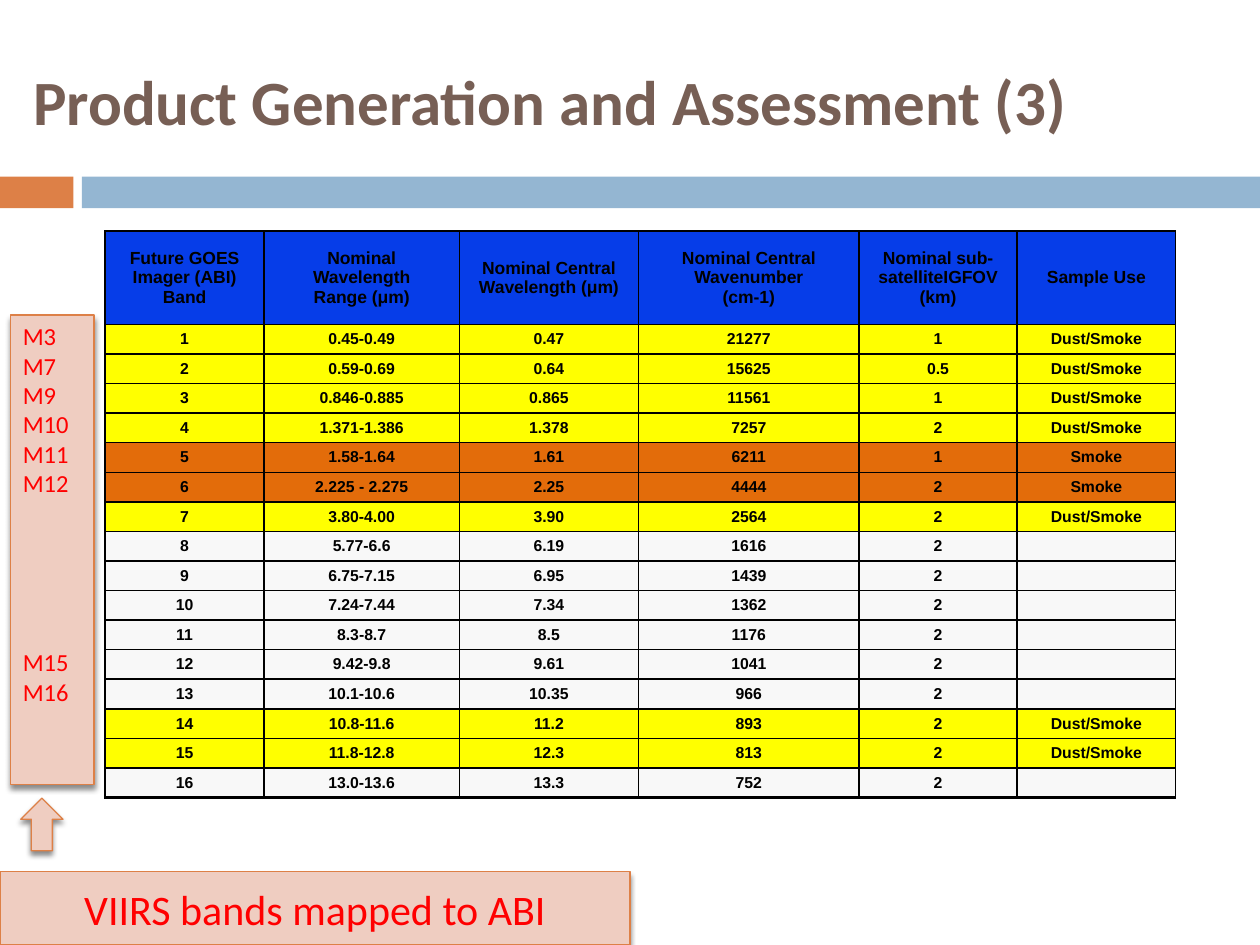
"""Build the slide that maps VIIRS bands to the future ABI bands."""
import pptx
import pptx.util
import pptx.dml.color
import pptx.enum.shapes
import pptx.enum.text
import pptx.oxml
import pptx.oxml.ns

Cm = pptx.util.Cm
Pt = pptx.util.Pt
RGBColor = pptx.dml.color.RGBColor
SHAPE = pptx.enum.shapes.MSO_SHAPE
ALIGN = pptx.enum.text.PP_ALIGN
ANCHOR = pptx.enum.text.MSO_ANCHOR

BLACK = RGBColor(0x00, 0x00, 0x00)
RED = RGBColor(0xFF, 0x00, 0x00)
BROWN = RGBColor(0x77, 0x5F, 0x55)
ORANGE = RGBColor(0xDD, 0x80, 0x47)
LIGHT_BLUE = RGBColor(0x94, 0xB6, 0xD2)
PEACH = RGBColor(0xEF, 0xCD, 0xC1)
HEADER_BLUE = RGBColor(0x06, 0x3D, 0xE8)
USE_COLORS = {
    "Dust/Smoke": RGBColor(0xFF, 0xFF, 0x00),
    "Smoke": RGBColor(0xE3, 0x6C, 0x0A),
    "": RGBColor(0xF8, 0xF8, 0xF8),
}

TITLE = "Product Generation and Assessment (3)"
CAPTION = "VIIRS bands mapped to ABI"
VIIRS_BANDS = ["M3", "M7", "M9", "M10", "M11", "M12", "M15", "M16"]
BAND_AFTER_GAP = "M15"
BAND_GAP = Pt(85.4)

HEADERS = (
    "Future GOES\nImager (ABI)\nBand",
    "Nominal\nWavelength\nRange (μm)",
    "Nominal Central\nWavelength (μm)",
    "Nominal Central Wavenumber\n(cm-1)",
    "Nominal sub-satelliteIGFOV\n(km)",
    "Sample Use",
)
BANDS = [
    ("1", "0.45-0.49", "0.47", "21277", "1", "Dust/Smoke"),
    ("2", "0.59-0.69", "0.64", "15625", "0.5", "Dust/Smoke"),
    ("3", "0.846-0.885", "0.865", "11561", "1", "Dust/Smoke"),
    ("4", "1.371-1.386", "1.378", "7257", "2", "Dust/Smoke"),
    ("5", "1.58-1.64", "1.61", "6211", "1", "Smoke"),
    ("6", "2.225 - 2.275", "2.25", "4444", "2", "Smoke"),
    ("7", "3.80-4.00", "3.90", "2564", "2", "Dust/Smoke"),
    ("8", "5.77-6.6", "6.19", "1616", "2", ""),
    ("9", "6.75-7.15", "6.95", "1439", "2", ""),
    ("10", "7.24-7.44", "7.34", "1362", "2", ""),
    ("11", "8.3-8.7", "8.5", "1176", "2", ""),
    ("12", "9.42-9.8", "9.61", "1041", "2", ""),
    ("13", "10.1-10.6", "10.35", "966", "2", ""),
    ("14", "10.8-11.6", "11.2", "893", "2", "Dust/Smoke"),
    ("15", "11.8-12.8", "12.3", "813", "2", "Dust/Smoke"),
    ("16", "13.0-13.6", "13.3", "752", "2", ""),
]
COLUMN_WIDTHS = (3.2, 3.94, 3.61, 4.45, 3.18, 3.2)
TABLE_LEFT, TABLE_TOP, TABLE_HEIGHT = 2.12, 4.66, 11.43
HEADER_HEIGHT = 1.88

BORDER = (
    '<a:{side} xmlns:a="http://schemas.openxmlformats.org/drawingml/2006/main" w="{width}">'
    '<a:solidFill><a:srgbClr val="{color}"/></a:solidFill></a:{side}>'
)
SHADOW = (
    '<a:outerShdw blurRad="{blur}" dist="{distance}" dir="5400000" rotWithShape="0">'
    '<a:srgbClr val="{color}"><a:alpha val="45000"/></a:srgbClr></a:outerShdw>'
)


def style(paragraph, size, color, name="Calibri", bold=False, align=ALIGN.LEFT):
    paragraph.alignment = align
    font = paragraph.font
    font.size, font.name, font.bold = Pt(size), name, bold
    font.color.rgb = color


def add_block(slide, kind, box, fill):
    shape = slide.shapes.add_shape(kind, *map(Cm, box))
    shape.shadow.inherit = False
    shape.fill.solid()
    shape.fill.fore_color.rgb = fill
    shape.line.fill.background()
    return shape


def add_callout(slide, kind, box):
    shape = add_block(slide, kind, box, PEACH)
    shape.line.color.rgb = ORANGE
    shape.line.width = Pt(0.79)
    effects = shape._element.spPr.find(pptx.oxml.ns.qn("a:effectLst"))
    shadow = SHADOW.format(blur=Pt(3), distance=Pt(2.4), color=BLACK)
    namespace = pptx.oxml.ns.nsdecls("a")
    effects.append(pptx.oxml.parse_xml(shadow.replace(" ", f" {namespace} ", 1)))
    return shape


def fill_cell(cell, text, size, fill, widths):
    cell.margin_left = cell.margin_right = cell.margin_top = cell.margin_bottom = 0
    cell.vertical_anchor = ANCHOR.MIDDLE
    cell.text = text
    for paragraph in cell.text_frame.paragraphs:
        style(paragraph, size, BLACK, "Arial", True, ALIGN.CENTER)
    properties = cell._tc.get_or_add_tcPr()
    for side, width in widths.items():
        border = BORDER.format(side=side, width=Pt(width), color=BLACK)
        properties.append(pptx.oxml.parse_xml(border))
    cell.fill.solid()
    cell.fill.fore_color.rgb = fill


def add_band_table(slide):
    rows = [HEADERS] + BANDS
    frame = slide.shapes.add_table(
        len(rows), len(HEADERS), Cm(TABLE_LEFT), Cm(TABLE_TOP),
        Cm(sum(COLUMN_WIDTHS)), Cm(TABLE_HEIGHT))
    table = frame.table
    table.first_row = table.horz_banding = False
    for column, width in zip(table.columns, COLUMN_WIDTHS):
        column.width = Cm(width)
    band_height = (TABLE_HEIGHT - HEADER_HEIGHT) / len(BANDS)
    for row_index, row in enumerate(rows):
        is_header = row_index == 0
        table.rows[row_index].height = Cm(HEADER_HEIGHT if is_header else band_height)
        fill = HEADER_BLUE if is_header else USE_COLORS[row[-1]]
        for column_index, text in enumerate(row):
            widths = {
                "lnL": 1.5 if column_index == 0 else 1,
                "lnR": 1,
                "lnT": 1.5 if is_header else 1,
                "lnB": 1.5 if row_index == len(BANDS) else 1,
            }
            cell = table.cell(row_index, column_index)
            fill_cell(cell, text, 10 if is_header else 9, fill, widths)


def main():
    presentation = pptx.Presentation()
    presentation.slide_width, presentation.slide_height = Cm(25.4), Cm(19.05)
    slide = presentation.slides.add_slide(presentation.slide_layouts[6])

    add_block(slide, SHAPE.RECTANGLE, (0, 3.56, 1.48, 0.64), ORANGE)
    add_block(slide, SHAPE.RECTANGLE, (1.65, 3.56, 23.75, 0.64), LIGHT_BLUE)
    add_band_table(slide)

    band_list = add_callout(slide, SHAPE.RECTANGLE, (0.21, 6.35, 1.69, 9.47)).text_frame
    band_list.vertical_anchor = ANCHOR.TOP
    band_list.text = "\n".join(VIIRS_BANDS)
    for paragraph, band in zip(band_list.paragraphs, VIIRS_BANDS):
        style(paragraph, 14, RED)
        if band == BAND_AFTER_GAP:
            paragraph.space_before = BAND_GAP

    caption = add_callout(slide, SHAPE.RECTANGLE, (0, 17.57, 12.7, 1.48)).text_frame
    caption.text = CAPTION
    style(caption.paragraphs[0], 24, RED, align=ALIGN.CENTER)
    add_callout(slide, SHAPE.UP_ARROW, (0.42, 16.09, 0.85, 1.06))

    title = slide.shapes.add_textbox(Cm(0.42), Cm(0.64), Cm(24.98), Cm(2.75)).text_frame
    title.word_wrap = True
    title.vertical_anchor = ANCHOR.MIDDLE
    title.text = TITLE
    style(title.paragraphs[0], 36, BROWN, bold=True)

    presentation.save("out.pptx")


if __name__ == "__main__":
    main()
